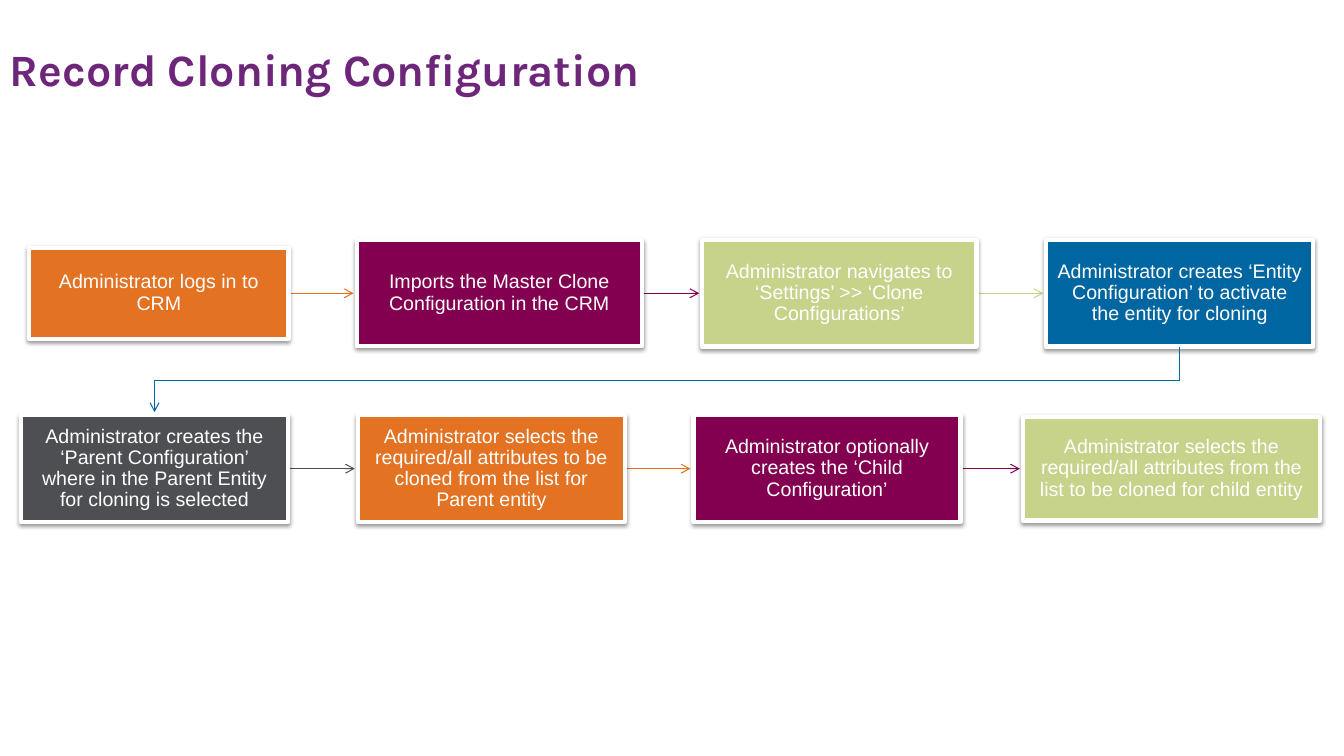
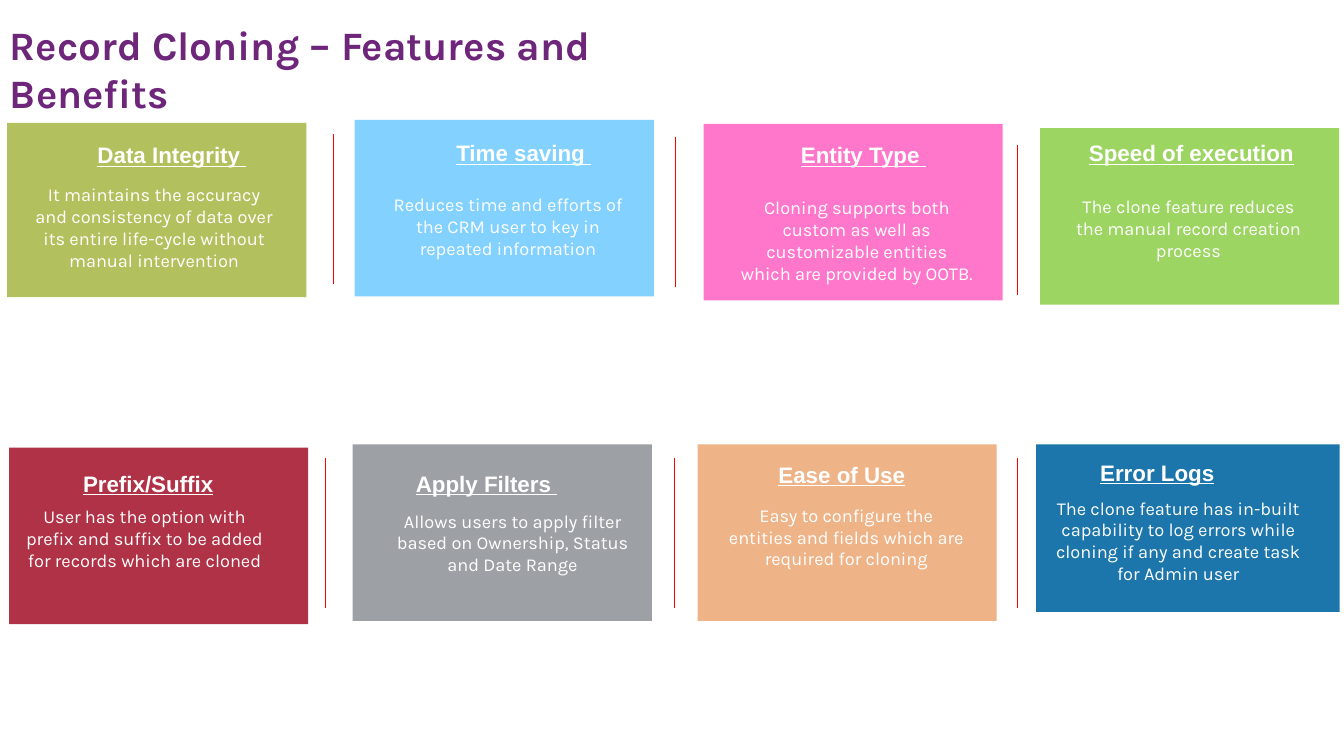
from dataclasses import dataclass

from lxml import etree
from pptx import Presentation
from pptx.dml.color import RGBColor
from pptx.enum.shapes import MSO_CONNECTOR, MSO_SHAPE
from pptx.enum.text import MSO_ANCHOR, PP_ALIGN
from pptx.oxml.ns import qn
from pptx.util import Cm, Pt

RECTANGLE = MSO_SHAPE.RECTANGLE
STRAIGHT = MSO_CONNECTOR.STRAIGHT
MIDDLE, TOP = MSO_ANCHOR.MIDDLE, MSO_ANCHOR.TOP
LEFT, CENTER = PP_ALIGN.LEFT, PP_ALIGN.CENTER

WHITE = RGBColor(0xFF, 0xFF, 0xFF)
VIOLET = RGBColor(0x6E, 0x26, 0x7B)
ORANGE = RGBColor(0xE3, 0x72, 0x22)
PLUM = RGBColor(0x83, 0x00, 0x51)
PALE_GREEN = RGBColor(0xC7, 0xD2, 0x8A)
BLUE = RGBColor(0x00, 0x66, 0xA1)
CHARCOAL = RGBColor(0x4D, 0x4F, 0x53)
OLIVE = RGBColor(0xA9, 0xBA, 0x4B)
SKY = RGBColor(0x73, 0xCC, 0xFF)
PINK = RGBColor(0xFF, 0x67, 0xC5)
GREEN = RGBColor(0x92, 0xD0, 0x50)
CRIMSON = RGBColor(0xA7, 0x19, 0x30)
GREY = RGBColor(0x92, 0x95, 0x9A)
PEACH = RGBColor(0xEE, 0xAA, 0x7A)
RED = RGBColor(0xFF, 0x00, 0x00)

SANS, DISPLAY = "Arial", "Karla"
THIN = Pt(0.75)
ARROW_GAP = 0.08
DIVIDER_LENGTH = 3.78


@dataclass
class Step:
    left: float
    width: float
    height: float
    color: RGBColor
    text: str


@dataclass
class Feature:
    """A card; card is left, top, width, height, the texts are left, top, width."""
    color: RGBColor
    card: tuple
    heading: str
    heading_at: tuple
    body: str
    body_at: tuple


# Centre height of each row, and its steps from left to right
STEP_ROWS = [
    (7.39, [
        Step(0.74, 6.53, 2.29, ORANGE, "Administrator logs in to CRM"),
        Step(8.99, 7.19, 2.67, PLUM, "Imports the Master Clone Configuration in the CRM"),
        Step(17.7, 6.91, 2.69, PALE_GREEN,
             "Administrator navigates to ‘Settings’ >> ‘Clone Configurations’"),
        Step(26.37, 6.73, 2.69, BLUE,
             "Administrator creates ‘Entity Configuration’ to activate the entity for cloning"),
    ]),
    (11.81, [
        Step(0.53, 6.73, 2.69, CHARCOAL,
             "Administrator creates the ‘Parent Configuration’ where in the Parent Entity "
             "for cloning is selected"),
        Step(9.02, 6.73, 2.69, ORANGE,
             "Administrator selects the required/all attributes to be cloned from the list "
             "for Parent entity"),
        Step(17.48, 6.73, 2.69, PLUM,
             "Administrator optionally creates the ‘Child Configuration’"),
        Step(25.78, 7.49, 2.62, PALE_GREEN,
             "Administrator selects the required/all attributes from the list to be cloned "
             "for child entity"),
    ]),
]

FEATURES = [
    Feature(OLIVE, (0.18, 3.1, 7.54, 4.39),
            "Data Integrity ", (1.63, 3.43, 5.41),
            "It maintains the accuracy and consistency of data over its entire life-cycle "
            "without manual intervention", (0.64, 4.62, 6.48)),
    Feature(SKY, (8.94, 3.02, 7.54, 4.45),
            "Time saving ", (10.57, 3.38, 5.26),
            "Reduces time and efforts of the CRM user to key in repeated information",
            (9.65, 4.88, 6.3)),
    Feature(PINK, (17.73, 3.12, 7.54, 4.45),
            "Entity Type ", (19.13, 3.43, 5.26),
            "Cloning supports both custom as well as customizable entities which are "
            "provided by OOTB.", (18.39, 4.95, 6.4)),
    Feature(GREEN, (26.21, 3.23, 7.54, 4.45),
            "Speed of execution", (27, 3.38, 6.05),
            "The clone feature reduces the manual record creation process",
            (26.75, 4.93, 6.4)),
    Feature(CRIMSON, (0.23, 11.28, 7.54, 4.45),
            "Prefix/Suffix", (0.71, 11.71, 6.05),
            "User has the option with prefix and suffix to be added for records which are "
            "cloned", (0.2, 12.73, 6.88)),
    Feature(GREY, (8.89, 11.2, 7.54, 4.45),
            "Apply Filters ", (8.94, 11.71, 6.65),
            "Allows users to apply filter based on Ownership, Status and Date Range",
            (9.45, 12.85, 6.93)),
    Feature(PEACH, (17.58, 11.2, 7.54, 4.45),
            "Ease of Use", (18.19, 11.48, 6.05),
            "Easy to configure the entities and fields which are required for cloning",
            (18.11, 12.7, 6.43)),
    Feature(BLUE, (26.11, 11.2, 7.65, 4.22),
            "Error Logs", (26.14, 11.43, 6.05),
            "The clone feature has in-built capability to log errors while cloning if any "
            "and create task for Admin user", (26.16, 12.52, 7.06)),
]

# Left and top of each line between the cards
DIVIDERS = [(8.41, 3.38), (17.02, 3.45), (25.65, 3.66),
            (8.2, 11.53), (16.99, 11.53), (25.65, 11.53)]


class SlideBuilder:
    def __init__(self):
        self.deck = Presentation()
        self.deck.slide_width, self.deck.slide_height = Cm(33.87), Cm(19.05)
        self.page = None

    def new_page(self, title, size):
        self.page = self.deck.slides.add_slide(self.deck.slide_layouts[6])
        self.text_box(title, (0.25, 0.84, 18.49), 1.78, size, DISPLAY, VIOLET, bold=True,
                      align=LEFT, anchor=MIDDLE, insets=(0, 0.13))

    def set_text(self, shape, text, size, font, color, bold=None, underline=None,
                 align=CENTER, anchor=TOP, insets=(0.25, 0.13)):
        """Fill the shape with one paragraph; insets are sides, then top and bottom."""
        frame = shape.text_frame
        frame.word_wrap = True
        frame.vertical_anchor = anchor
        frame.margin_left = frame.margin_right = Cm(insets[0])
        frame.margin_top = frame.margin_bottom = Cm(insets[1])
        para = frame.paragraphs[0]
        para.text, para.alignment = text, align
        para.font.size, para.font.name = Pt(size), font
        para.font.color.rgb = color
        para.font.bold, para.font.underline = bold, underline
        return para

    def text_box(self, text, place, height, size, font, color, **style):
        left, top, width = place
        box = self.page.shapes.add_textbox(Cm(left), Cm(top), Cm(width), Cm(height))
        self.set_text(box, text, size, font, color, **style)

    def rectangle(self, left, top, width, height, color):
        shape = self.page.shapes.add_shape(RECTANGLE, Cm(left), Cm(top), Cm(width), Cm(height))
        shape.shadow.inherit = False
        shape.fill.solid()
        shape.fill.fore_color.rgb = color
        shape.line.fill.background()
        return shape

    def step(self, step, middle):
        shape = self.rectangle(step.left, middle - step.height / 2,
                               step.width, step.height, step.color)
        shape.line.color.rgb, shape.line.width = WHITE, Pt(3)
        effects = shape._element.spPr.find(qn("a:effectLst"))
        shadow = etree.SubElement(effects, qn("a:outerShdw"), blurRad="39400", dist="20300",
                                  dir="5400000", rotWithShape="0")
        tint = etree.SubElement(shadow, qn("a:srgbClr"), val="000000")
        etree.SubElement(tint, qn("a:alpha"), val="38000")
        para = self.set_text(shape, step.text, 14, SANS, WHITE,
                             anchor=MIDDLE, insets=(0.28, 0.28))
        para.line_spacing = 0.9

    def line(self, start, end, color):
        connector = self.page.shapes.add_connector(STRAIGHT, *map(Cm, start + end))
        connector.line.color.rgb, connector.line.width = color, THIN
        etree.SubElement(connector._element.spPr, qn("a:effectLst"))
        return connector

    def add_arrowhead(self, shape):
        outline = shape._element.spPr.find(qn("a:ln"))
        etree.SubElement(outline, qn("a:tailEnd"), type="arrow")

    def arrow(self, start, end, color):
        self.add_arrowhead(self.line(start, end, color))

    def bent_arrow(self, points, color):
        corners = [(Cm(x), Cm(y)) for x, y in points]
        outline = self.page.shapes.build_freeform(*corners[0])
        outline.add_line_segments(corners[1:], close=False)
        shape = outline.convert_to_shape()
        shape.shadow.inherit = False
        shape.fill.background()
        shape.line.color.rgb, shape.line.width = color, THIN
        self.add_arrowhead(shape)

    def feature(self, feature):
        card = self.rectangle(*feature.card, feature.color)
        tint = card._element.spPr.find(qn("a:solidFill")).find(qn("a:srgbClr"))
        etree.SubElement(tint, qn("a:alpha"), val="89000")
        self.text_box(feature.heading, feature.heading_at, 0.94, 16, SANS, WHITE,
                      bold=True, underline=True)
        self.text_box(feature.body, feature.body_at, 2.36, 13, DISPLAY, WHITE,
                      insets=(0.25, 0))


def build_configuration(builder):
    builder.new_page("Record Cloning Configuration", 32)
    for middle, steps in STEP_ROWS:
        for step, following in zip(steps, steps[1:]):
            builder.arrow((step.left + step.width, middle),
                          (following.left - ARROW_GAP, middle), step.color)
        for step in steps:
            builder.step(step, middle)
    (upper, first_row), (lower, second_row) = STEP_ROWS
    last, first = first_row[-1], second_row[0]
    start_x, end_x = last.left + last.width / 2, first.left + first.width / 2
    turn = 9.6
    builder.bent_arrow([(start_x, upper + last.height / 2), (start_x, turn), (end_x, turn),
                        (end_x, lower - first.height / 2 - ARROW_GAP)], last.color)


def build_features(builder):
    builder.new_page("Record Cloning – Features and Benefits", 28.8)
    for feature in FEATURES:
        builder.feature(feature)
    for left, top in DIVIDERS:
        builder.line((left, top), (left, top + DIVIDER_LENGTH), RED)


def main():
    builder = SlideBuilder()
    build_configuration(builder)
    build_features(builder)
    builder.deck.save("out.pptx")


if __name__ == "__main__":
    main()
